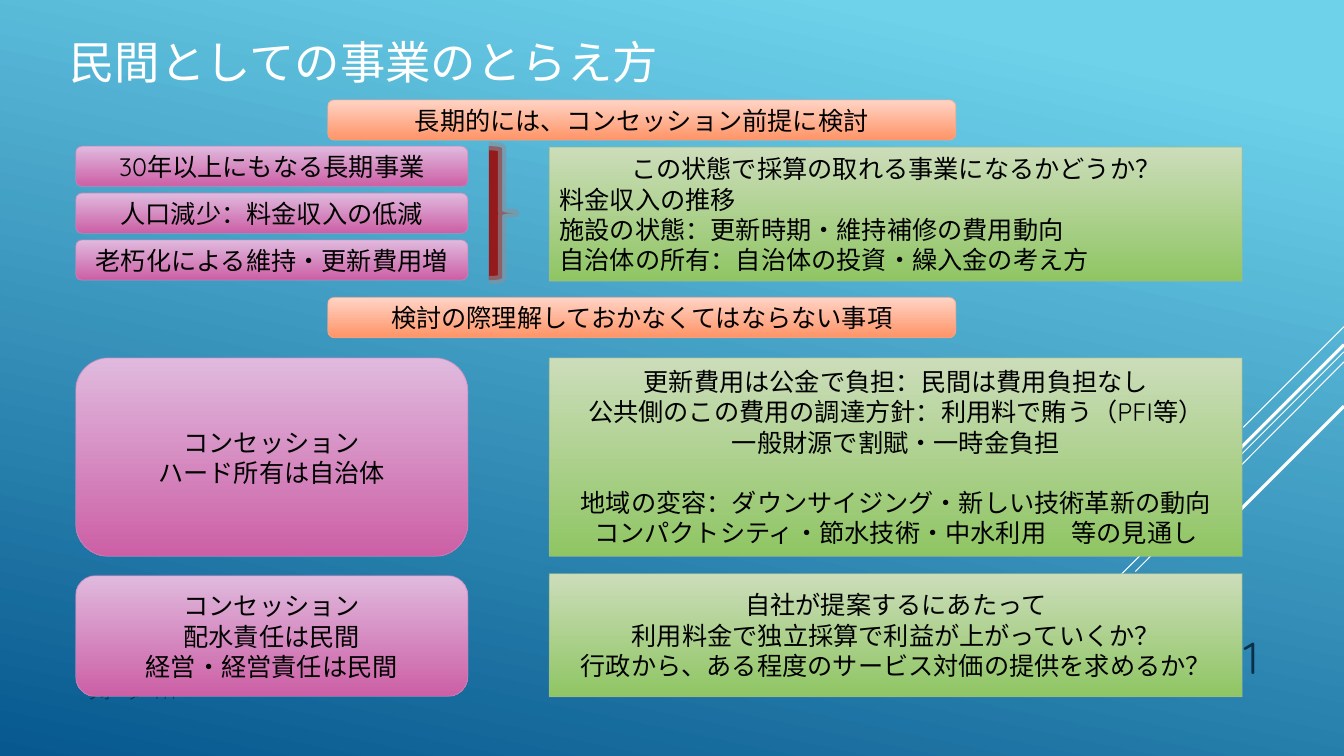
"""Build the slide on how private firms view a concession business."""
from lxml import etree
from pptx import Presentation
from pptx.dml.color import RGBColor
from pptx.enum.shapes import MSO_CONNECTOR, MSO_SHAPE
from pptx.enum.text import MSO_ANCHOR, PP_ALIGN
from pptx.oxml.ns import qn
from pptx.util import Inches, Pt

ROUND, RECT, BRACE = MSO_SHAPE.ROUNDED_RECTANGLE, MSO_SHAPE.RECTANGLE, MSO_SHAPE.RIGHT_BRACE
STRAIGHT = MSO_CONNECTOR.STRAIGHT
LEFT, CENTER, RIGHT = PP_ALIGN.LEFT, PP_ALIGN.CENTER, PP_ALIGN.RIGHT
TOP, MIDDLE, BOTTOM = MSO_ANCHOR.TOP, MSO_ANCHOR.MIDDLE, MSO_ANCHOR.BOTTOM
FONT = "Quicksand"
COLORS = {
    "sky": "6ED2EB", "sea": "06588E", "white": "FFFFFF", "black": "000000", "navy": "0A304A",
    "pink_top": "E0BADE", "pink_end": "CC5FA5", "pink_line": "C089BD",
    "green_top": "CCDDBA", "green_end": "8FC563", "green_line": "A4BB8B",
    "orange_top": "FFD4C6", "orange_end": "FF9467", "orange_line": "EEA78F",
    "brace": "941A1B", "brace_line": "89919C",
}


def write(box, text, size=18, color="black", align=CENTER, anchor=MIDDLE):
    """Fill a box with one paragraph per line of text."""
    frame = box.text_frame
    frame.word_wrap = True
    frame.vertical_anchor = anchor
    for index, line in enumerate(text.split("\n")):
        para = frame.paragraphs[0] if index == 0 else frame.add_paragraph()
        para.alignment = align
        span = para.add_run()
        span.text = line
        span.font.size = Pt(size)
        span.font.name = FONT
        span.font.color.rgb = RGBColor.from_string(COLORS[color])
    return frame.paragraphs


def shade(fill, stops, angle):
    """Give a fill a two-colour gradient."""
    fill.gradient()
    fill.gradient_angle = angle
    for stop, (position, color) in zip(fill.gradient_stops, stops):
        stop.position = position
        stop.color.rgb = RGBColor.from_string(COLORS[color])


deck = Presentation()
deck.slide_width, deck.slide_height = Inches(13.33), Inches(7.5)
page = deck.slides.add_slide(deck.slide_layouts[6])
shade(page.background.fill, [(0.1, "sky"), (1, "sea")], 258)

rays = [
    (3.24, 12.33, 4.24, 0.75), (3.49, 10.07, 6.75, 0.75), (3.59, 11.26, 5.67, 0.75),
    (3.42, 11.42, 5.33, 2.25), (4.03, 11.94, 5.42, 2.25),
]
for start_y, end_x, end_y, width in rays:
    ray = page.shapes.add_connector(
        STRAIGHT, Inches(13.33), Inches(start_y), Inches(end_x), Inches(end_y))
    ray.line.color.rgb = RGBColor.from_string(COLORS["white"])
    ray.line.width = Pt(width)
    etree.SubElement(ray.element.spPr, qn("a:effectLst"))

labels = [
    ((0.59, 0.35, 9.33, 0.51), "民間としての事業のとらえ方", 32.4, "white", LEFT, MIDDLE),
    ((0.75, 6.75, 8.25, 0.4), "ウオーターPPP", 10, "navy", LEFT, TOP),
    ((11.33, 6.1, 1.25, 0.73), "11", 32, "navy", RIGHT, BOTTOM),
]
for place, text, size, color, align, anchor in labels:
    label = page.shapes.add_textbox(*map(Inches, place))
    write(label, text, size=size, color=color, align=align, anchor=anchor)

pink_x, pink_width = 0.75, 3.89
green_x, green_width = 5.45, 6.87
orange_x, orange_width = 3.25, 6.23
bar_height = 0.4
issues = ["30年以上にもなる長期事業", "人口減少：料金収入の低減", "老朽化による維持・更新費用増"]
panels = [
    (ROUND, "pink", (pink_x, 1.45 + 0.465 * row, pink_width, bar_height), issue)
    for row, issue in enumerate(issues)
]
panels += [
    (BRACE, "brace", (4.85, 1.45, 0.26, 1.33), ""),
    (RECT, "green", (green_x, 1.46, green_width, 1.33),
     "この状態で採算の取れる事業になるかどうか？\n料金収入の推移\n"
     "施設の状態：更新時期・維持補修の費用動向\n自治体の所有：自治体の投資・繰入金の考え方"),
    (ROUND, "orange", (orange_x, 0.99, orange_width, bar_height),
     "長期的には、コンセッション前提に検討"),
    (ROUND, "orange", (orange_x, 2.95, orange_width, bar_height),
     "検討の際理解しておかなくてはならない事項"),
    (ROUND, "pink", (pink_x, 3.55, pink_width, 1.97), "コンセッション\nハード所有は自治体"),
    (RECT, "green", (green_x, 3.55, green_width, 1.97),
     "更新費用は公金で負担：民間は費用負担なし\n"
     "公共側のこの費用の調達方針：利用料で賄う（PFI等）\n一般財源で割賦・一時金負担\n"
     "地域の変容：ダウンサイジング・新しい技術革新の動向\n"
     "コンパクトシティ・節水技術・中水利用　等の見通し"),
    (ROUND, "pink", (pink_x, 5.71, pink_width, 1.2),
     "コンセッション\n配水責任は民間\n経営・経営責任は民間"),
    (RECT, "green", (green_x, 5.69, green_width, 1.22),
     "自社が提案するにあたって\n利用料金で独立採算で利益が上がっていくか？\n"
     "行政から、ある程度のサービス対価の提供を求めるか？"),
]
for kind, tone, place, text in panels:
    panel = page.shapes.add_shape(kind, *map(Inches, place))
    panel.shadow.inherit = False
    panel.line.color.rgb = RGBColor.from_string(COLORS[f"{tone}_line"])
    line_color = panel.element.spPr.find(f"{qn('a:ln')}/{qn('a:solidFill')}/{qn('a:srgbClr')}")
    etree.SubElement(line_color, qn("a:alpha"), val="60000")
    if kind == BRACE:
        panel.fill.solid()
        panel.fill.fore_color.rgb = RGBColor.from_string(COLORS[tone])
        panel.line.width = Pt(6)
        continue
    shade(panel.fill, [(0, f"{tone}_top"), (1, f"{tone}_end")], 270)
    panel.line.width = Pt(0.75)
    paras = write(panel, text)
    if text.startswith("この状態"):
        for para in paras[1:]:
            para.alignment = LEFT
    if text.startswith("更新費用"):
        paras[3].space_before = Pt(21.6)

deck.save("out.pptx")
